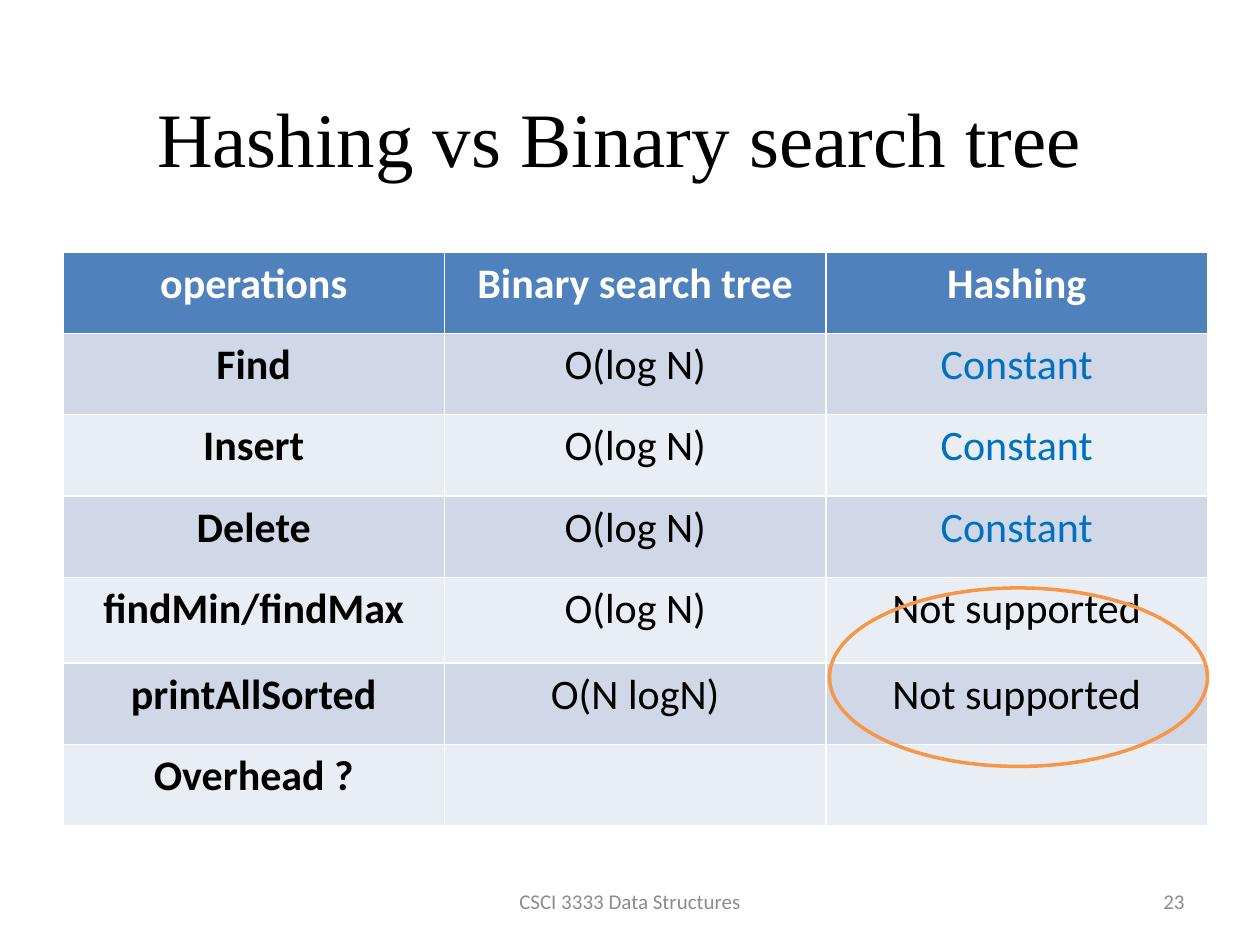
from dataclasses import dataclass

from pptx import Presentation
from pptx.dml.color import RGBColor
from pptx.enum import shapes, text
from pptx.util import Pt

BLACK = RGBColor(0x00, 0x00, 0x00)
WHITE = RGBColor(0xFF, 0xFF, 0xFF)
GRAY = RGBColor(0x8C, 0x8C, 0x8C)
BLUE = RGBColor(0x00, 0x70, 0xC0)
ORANGE = RGBColor(0xF7, 0x96, 0x46)
HEADER_FILL = RGBColor(0x4F, 0x81, 0xBD)
BAND_FILLS = (RGBColor(0xE9, 0xED, 0xF4), RGBColor(0xD0, 0xD8, 0xE8))

CENTER = text.PP_ALIGN.CENTER
RIGHT = text.PP_ALIGN.RIGHT
MIDDLE = text.MSO_ANCHOR.MIDDLE


@dataclass
class Box:
    left: float
    top: float
    width: float
    height: float

    def lengths(self) -> tuple:
        return Pt(self.left), Pt(self.top), Pt(self.width), Pt(self.height)


@dataclass
class Style:
    size: float
    color: RGBColor
    name: str = "Calibri"
    bold: bool = False
    align: text.PP_ALIGN = CENTER


@dataclass
class Footer:
    words: str
    box: Box
    style: Style


TITLE_BOX = Box(30, 42, 648, 72)
TABLE_BOX = Box(36, 144, 654, 328)
OVAL_BOX = Box(474, 336, 216, 102)
ROW_HEIGHT = 46.5
MIN_MAX_HEIGHT = 49

ROWS = [
    ("operations", "Binary search tree", "Hashing"),
    ("Find", "O(log N)", "Constant"),
    ("Insert", "O(log N)", "Constant"),
    ("Delete", "O(log N)", "Constant"),
    ("findMin/findMax", "O(log N)", "Not supported"),
    ("printAllSorted", "O(N logN)", "Not supported"),
    ("Overhead ?", "", ""),
]

FOOTERS = [
    Footer("CSCI 3333 Data Structures", Box(246, 500.5, 228, 28.75), Style(12, GRAY)),
    Footer("23", Box(516, 500.5, 168, 28.75), Style(12, GRAY, align=RIGHT)),
]


def write(tf, words: str, style: Style) -> None:
    p = tf.paragraphs[0]
    p.alignment = style.align
    r = p.add_run()
    r.text = words
    for key, value in {
        "size": Pt(style.size), "name": style.name, "bold": style.bold
    }.items():
        setattr(r.font, key, value)
    r.font.color.rgb = style.color


def add_title(s, words: str) -> None:
    sp = s.shapes.title
    sp.left, sp.top, sp.width, sp.height = TITLE_BOX.lengths()
    sp.text_frame.vertical_anchor = MIDDLE
    write(sp.text_frame, words, Style(44, BLACK, "Times New Roman"))


def add_footer(s, footer: Footer) -> None:
    tf = s.shapes.add_textbox(*footer.box.lengths()).text_frame
    tf.word_wrap = True
    tf.vertical_anchor = MIDDLE
    write(tf, footer.words, footer.style)


def cell_style(row: int, col: int, words: str) -> Style:
    if row == 0:
        return Style(24, WHITE, bold=True)
    return Style(24, BLUE if words == "Constant" else BLACK, bold=col == 0)


def add_comparison(s) -> None:
    table = s.shapes.add_table(len(ROWS), len(ROWS[0]), *TABLE_BOX.lengths()).table
    for col in table.columns:
        col.width = Pt(TABLE_BOX.width / len(ROWS[0]))
    for i, row in enumerate(ROWS):
        is_min_max = row[0] == "findMin/findMax"
        table.rows[i].height = Pt(MIN_MAX_HEIGHT if is_min_max else ROW_HEIGHT)
        for j, words in enumerate(row):
            cell = table.cell(i, j)
            cell.fill.solid()
            cell.fill.fore_color.rgb = BAND_FILLS[i % 2] if i else HEADER_FILL
            if words:
                write(cell.text_frame, words, cell_style(i, j, words))


def add_highlight(s) -> None:
    sp = s.shapes.add_shape(shapes.MSO_SHAPE.OVAL, *OVAL_BOX.lengths())
    sp.shadow.inherit = False
    sp.fill.background()
    sp.line.color.rgb = ORANGE
    sp.line.width = Pt(2)


def main() -> None:
    prs = Presentation()
    prs.slide_width, prs.slide_height = Pt(720), Pt(540)
    s = prs.slides.add_slide(prs.slide_layouts[5])
    add_title(s, "Hashing vs Binary search tree")
    for footer in FOOTERS:
        add_footer(s, footer)
    add_comparison(s)
    add_highlight(s)
    prs.save("out.pptx")


if __name__ == "__main__":
    main()
